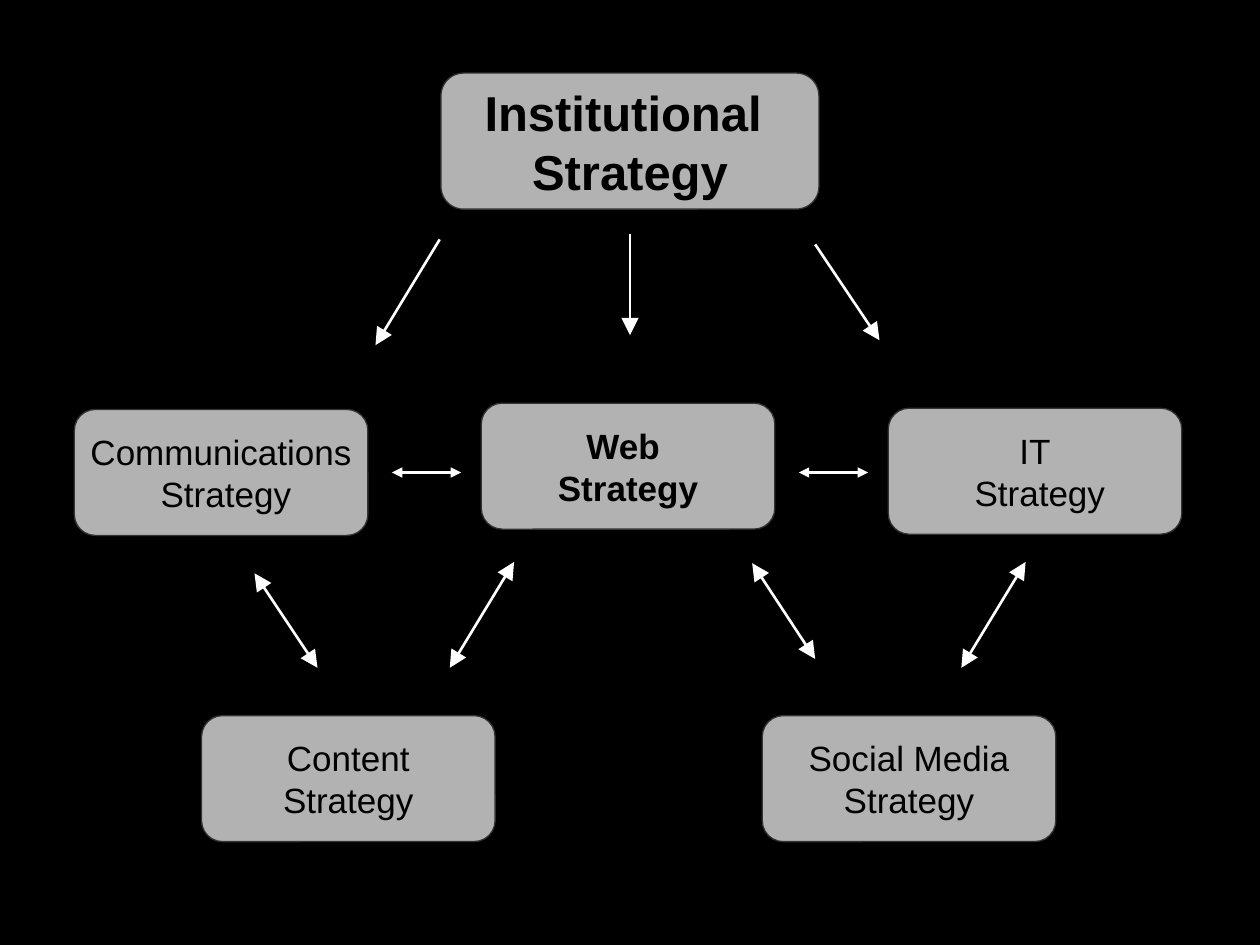
"""Build a slide that shows how an institution's strategies relate."""
from dataclasses import dataclass

from lxml import etree
from pptx import Presentation
from pptx.dml.color import RGBColor
from pptx.enum.shapes import MSO_CONNECTOR, MSO_SHAPE
from pptx.enum.text import MSO_ANCHOR, PP_ALIGN
from pptx.oxml.ns import qn
from pptx.slide import Slide
from pptx.util import Emu, Pt

ROUNDED = MSO_SHAPE.ROUNDED_RECTANGLE
STRAIGHT = MSO_CONNECTOR.STRAIGHT
MIDDLE = MSO_ANCHOR.MIDDLE
CENTER = PP_ALIGN.CENTER

BLACK = RGBColor(0x00, 0x00, 0x00)
WHITE = RGBColor(0xFF, 0xFF, 0xFF)
GREY = RGBColor(0xB2, 0xB2, 0xB2)
DARK_GREY = RGBColor(0x33, 0x33, 0x33)

FONT = "Arial"
EMU_PER_PX = 9144
SLIDE_WIDTH, SLIDE_HEIGHT = 1000, 750


@dataclass(frozen=True)
class Strategy:
    lines: tuple[str, str]
    left: int
    top: int
    width: int = 233
    height: int = 100
    size: int = 20
    bold: bool = False


@dataclass(frozen=True)
class Arrow:
    start: tuple[int, int]
    end: tuple[int, int]
    two_way: bool = True
    head_size: str = "lg"


STRATEGIES = (
    Strategy(("Institutional ", "Strategy"), 350, 58, 300, 108, 28, True),
    Strategy(("Web ", "Strategy"), 382, 320, bold=True),
    Strategy(("Content", "Strategy"), 160, 568),
    Strategy(("Social Media", "Strategy"), 605, 568),
    Strategy(("IT", " Strategy"), 705, 324),
    Strategy(("Communications", " Strategy"), 59, 325),
)

ARROWS = (
    Arrow((500, 186), (500, 266), two_way=False),
    Arrow((408, 446), (357, 530)),
    Arrow((597, 447), (647, 523)),
    Arrow((349, 190), (298, 274), two_way=False),
    Arrow((647, 194), (698, 270), two_way=False),
    Arrow((634, 375), (689, 375), head_size="med"),
    Arrow((311, 375), (366, 375), head_size="med"),
    Arrow((814, 446), (763, 530)),
    Arrow((202, 455), (252, 530)),
)


def px(length: int) -> Emu:
    return Emu(length * EMU_PER_PX)


def draw_strategy(slide: Slide, strategy: Strategy) -> None:
    box = slide.shapes.add_shape(
        ROUNDED, px(strategy.left), px(strategy.top),
        px(strategy.width), px(strategy.height),
    )
    box.shadow.inherit = False
    box.fill.solid()
    box.fill.fore_color.rgb = GREY
    box.line.color.rgb = DARK_GREY
    box.line.width = Pt(0.75)

    frame = box.text_frame
    frame.word_wrap = False
    frame.vertical_anchor = MIDDLE
    for index, line in enumerate(strategy.lines):
        paragraph = frame.add_paragraph() if index else frame.paragraphs[0]
        paragraph.alignment = CENTER
        run = paragraph.add_run()
        run.text = line
        run.font.name = FONT
        run.font.size = Pt(strategy.size)
        run.font.bold = strategy.bold
        run.font.color.rgb = BLACK


def draw_arrow(slide: Slide, arrow: Arrow) -> None:
    connector = slide.shapes.add_connector(
        STRAIGHT, *map(px, arrow.start + arrow.end)
    )
    connector.line.color.rgb = WHITE
    connector.line.width = Pt(1.5)
    properties = connector.element.spPr
    outline = properties.find(qn("a:ln"))
    for end in ("headEnd", "tailEnd") if arrow.two_way else ("tailEnd",):
        etree.SubElement(
            outline, qn(f"a:{end}"),
            {"type": "triangle", "w": arrow.head_size, "len": arrow.head_size},
        )
    etree.SubElement(properties, qn("a:effectLst"))


def main() -> None:
    presentation = Presentation()
    presentation.slide_width = px(SLIDE_WIDTH)
    presentation.slide_height = px(SLIDE_HEIGHT)
    slide = presentation.slides.add_slide(presentation.slide_layouts[6])
    slide.background.fill.solid()
    slide.background.fill.fore_color.rgb = BLACK
    for strategy in STRATEGIES:
        draw_strategy(slide, strategy)
    for arrow in ARROWS:
        draw_arrow(slide, arrow)
    presentation.save("out.pptx")


if __name__ == "__main__":
    main()
